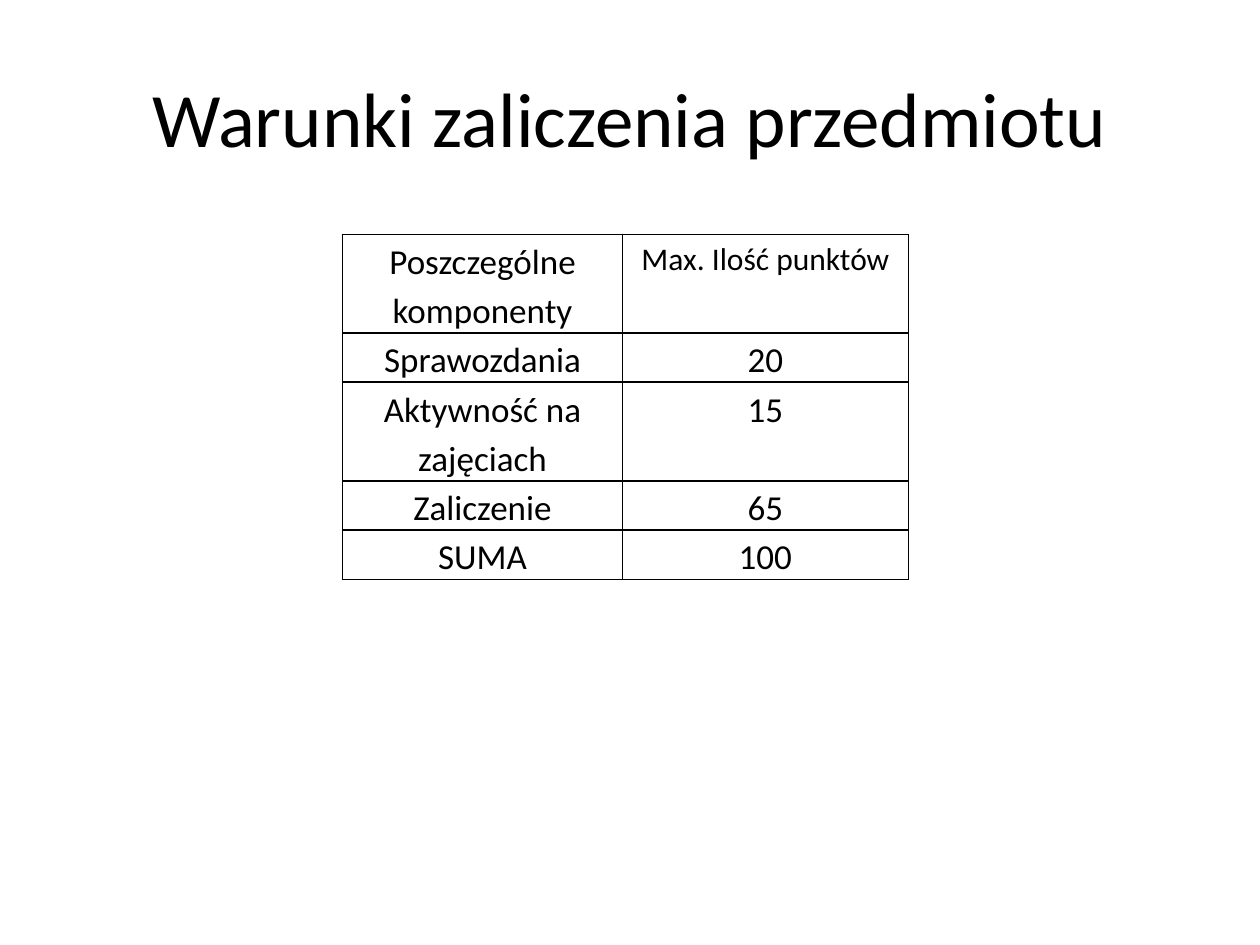
import pptx
import pptx.dml.color
import pptx.enum.text
import pptx.oxml
import pptx.oxml.ns
import pptx.util

Inches = pptx.util.Inches
ALIGN = pptx.enum.text.PP_ALIGN
ANCHOR = pptx.enum.text.MSO_ANCHOR
COLOURS = {"ink": "000000"}
FONT = "Calibri"

ROWS = [
    ("Poszczególne komponenty", "Max. Ilość punktów"),
    ("Sprawozdania", "20"),
    ("Aktywność na zajęciach", "15"),
    ("Zaliczenie", "65"),
    ("SUMA", "100"),
]
COLUMN_WIDTHS = [2.22, 2.27]
ROW_HEIGHTS = [0.77, 0.38, 0.39, 0.38, 0.39]


def write_text(frame, text, size=20, colour="ink", spacing=None):
    para = frame.paragraphs[0]
    para.alignment = ALIGN.CENTER
    para.line_spacing = spacing
    span = para.add_run()
    span.text = text
    span.font.name = FONT
    span.font.size = pptx.util.Pt(size)
    span.font.color.rgb = pptx.dml.color.RGBColor.from_string(COLOURS[colour])


def add_title(page, text):
    title = page.shapes.title
    title.left, title.top = Inches(0.5), Inches(0.3)
    title.width, title.height = Inches(9), Inches(1.25)
    title.text_frame.vertical_anchor = ANCHOR.MIDDLE
    write_text(title.text_frame, text, size=44)


def draw_borders(cell, colour="ink", width=1):
    properties = cell._tc.get_or_add_tcPr()
    for index, side in enumerate(("lnL", "lnR", "lnT", "lnB")):
        line = pptx.oxml.parse_xml(
            f'<a:{side} {pptx.oxml.ns.nsdecls("a")} w="{pptx.util.Pt(width)}">'
            f'<a:solidFill><a:srgbClr val="{COLOURS[colour]}"/></a:solidFill>'
            f'</a:{side}>'
        )
        properties.insert(index, line)


def format_cell(cell, text, size, anchor):
    cell.margin_left = cell.margin_right = Inches(0.07)
    cell.margin_top = cell.margin_bottom = 0
    cell.vertical_anchor = anchor
    cell.fill.background()
    draw_borders(cell)
    write_text(cell.text_frame, text, size=size, spacing=1.15)


def add_points_table(page):
    frame = page.shapes.add_table(
        len(ROWS), len(COLUMN_WIDTHS), Inches(2.72), Inches(1.86),
        Inches(sum(COLUMN_WIDTHS)), Inches(sum(ROW_HEIGHTS)),
    )
    table = frame.table
    table.first_row = table.horz_banding = False
    for column, width in zip(table.columns, COLUMN_WIDTHS):
        column.width = Inches(width)
    for row, height in zip(table.rows, ROW_HEIGHTS):
        row.height = Inches(height)
    for r, texts in enumerate(ROWS):
        for c, text in enumerate(texts):
            size = 18 if (r, c) == (0, 1) else 20
            anchor = ANCHOR.MIDDLE if r > 0 and c == 0 else ANCHOR.TOP
            format_cell(table.cell(r, c), text, size, anchor)


def main():
    deck = pptx.Presentation()
    deck.slide_width, deck.slide_height = Inches(10), Inches(7.5)
    page = deck.slides.add_slide(deck.slide_layouts[5])
    add_title(page, "Warunki zaliczenia przedmiotu")
    add_points_table(page)
    deck.save("out.pptx")


if __name__ == "__main__":
    main()
